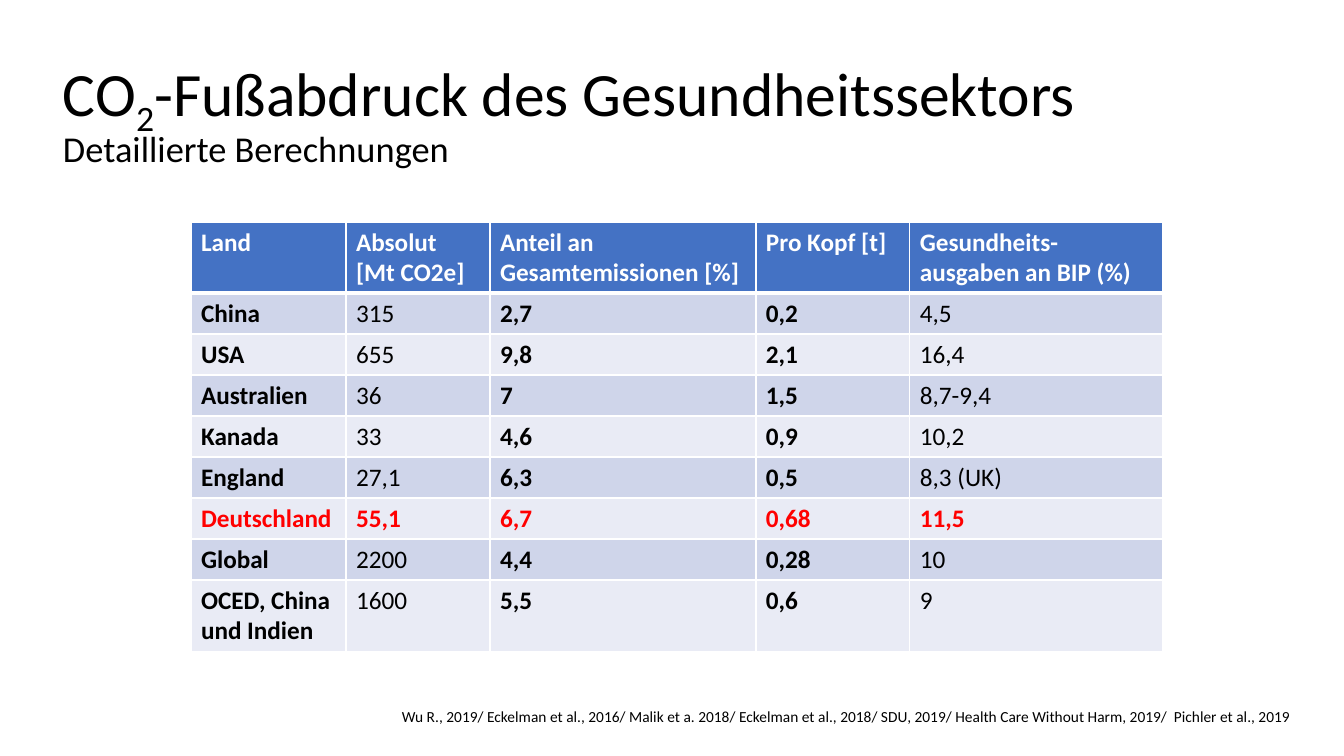
import lxml.etree
import pptx
import pptx.dml.color
import pptx.enum.text
import pptx.oxml.ns
import pptx.util

BLACK = pptx.dml.color.RGBColor(0x00, 0x00, 0x00)
WHITE = pptx.dml.color.RGBColor(0xFF, 0xFF, 0xFF)
RED = pptx.dml.color.RGBColor(0xFF, 0x00, 0x00)
BLUE = pptx.dml.color.RGBColor(0x44, 0x72, 0xC4)
BAND_DARK = pptx.dml.color.RGBColor(0xCF, 0xD5, 0xEA)
BAND_LIGHT = pptx.dml.color.RGBColor(0xE9, 0xEB, 0xF5)

HEADER = ["Land", "Absolut\n[Mt CO2e]", "Anteil an Gesamtemissionen [%]",
          "Pro Kopf [t]", "Gesundheits-ausgaben an BIP (%)"]
COUNTRIES = [
    ["China", "315", "2,7", "0,2", "4,5"],
    ["USA", "655", "9,8", "2,1", "16,4"],
    ["Australien", "36", "7", "1,5", "8,7-9,4"],
    ["Kanada", "33", "4,6", "0,9", "10,2"],
    ["England", "27,1", "6,3", "0,5", "8,3 (UK)"],
    ["Deutschland", "55,1", "6,7", "0,68", "11,5"],
    ["Global", "2200", "4,4", "0,28", "10"],
    ["OCED, China und Indien", "1600", "5,5", "0,6", "9"],
]
HIGHLIGHT = "Deutschland"
BOLD_COLUMNS = (0, 2, 3)
COLUMN_WIDTHS = [155, 144, 266, 154, 253]
ROW_HEIGHTS = [71] + [41] * 7 + [72]
SOURCES = ("Wu R., 2019/ Eckelman et al., 2016/ Malik et a. 2018/ "
           "Eckelman et al., 2018/ SDU, 2019/ Health Care Without Harm, 2019/  "
           "Pichler et al., 2019")


def px(length):
    """Turn whole pixels into EMU."""
    return pptx.util.Emu(round(length * 914400 / 100.8))


class SlideBuilder:
    """Hold the text style and the current page."""

    font_name = "Calibri"

    def __init__(self, page):
        """Keep the page that receives the elements."""
        self.page = page

    def add_span(self, para, text, size, color=BLACK, bold=False, baseline=0):
        """Add one styled run to a paragraph."""
        span = para.add_run()
        span.text = text
        span.font.name = self.font_name
        span.font.size = pptx.util.Pt(size)
        span.font.bold = bold
        span.font.color.rgb = color
        if baseline:
            span._r.get_or_add_rPr().set("baseline", str(baseline * 1000))

    def add_text(self, left, top, width, height, anchor):
        """Add a wrapping text box and return its first paragraph."""
        box = self.page.shapes.add_textbox(px(left), px(top), px(width), px(height))
        box.text_frame.word_wrap = True
        box.text_frame.vertical_anchor = anchor
        para = box.text_frame.paragraphs[0]
        para.line_spacing = 0.9
        return para

    def add_borders(self, cell, **widths):
        """Draw white cell borders with the given widths in points."""
        properties = cell._tc.get_or_add_tcPr()
        for side in "LRTB":
            line = lxml.etree.SubElement(properties, pptx.oxml.ns.qn(f"a:ln{side}"))
            line.set("w", str(pptx.util.Pt(widths.get(side, 1))))
            fill = lxml.etree.SubElement(line, pptx.oxml.ns.qn("a:solidFill"))
            color = lxml.etree.SubElement(fill, pptx.oxml.ns.qn("a:srgbClr"))
            color.set("val", str(WHITE))

    def add_cell(self, cell, text, fill, color, bold, **borders):
        """Fill one table cell, one paragraph for each line of text."""
        self.add_borders(cell, **borders)
        cell.fill.solid()
        cell.fill.fore_color.rgb = fill
        for index, line in enumerate(text.split("\n")):
            frame = cell.text_frame
            para = frame.add_paragraph() if index else frame.paragraphs[0]
            self.add_span(para, line, 18, color, bold)

    def add_table(self, left, top):
        """Add the emissions table with a header and banded rows."""
        rows = [HEADER] + COUNTRIES
        table = self.page.shapes.add_table(
            len(rows), len(HEADER), px(left), px(top),
            px(sum(COLUMN_WIDTHS)), px(sum(ROW_HEIGHTS))).table
        for column, width in zip(table.columns, COLUMN_WIDTHS):
            column.width = px(width)
        for row, height in zip(table.rows, ROW_HEIGHTS):
            row.height = px(height)
        for row_index, values in enumerate(rows):
            is_header = row_index == 0
            is_highlight = values[0] == HIGHLIGHT
            band = BAND_DARK if row_index % 2 else BAND_LIGHT
            fill = BLUE if is_header else band
            color = WHITE if is_header else RED if is_highlight else BLACK
            borders = {0: {"B": 3}, 1: {"T": 3}}.get(row_index, {})
            for column_index, text in enumerate(values):
                bold = is_header or is_highlight or column_index in BOLD_COLUMNS
                self.add_cell(table.cell(row_index, column_index), text,
                              fill, color, bold, **borders)


def main():
    """Build the slide and save the deck."""
    deck = pptx.Presentation()
    deck.slide_width, deck.slide_height = px(1344), px(756)
    builder = SlideBuilder(deck.slides.add_slide(deck.slide_layouts[6]))
    anchors = pptx.enum.text.MSO_ANCHOR

    title = builder.add_text(53, 40, 1251, 146, anchors.MIDDLE)
    builder.add_span(title, "CO", 44)
    builder.add_span(title, "2", 44, baseline=-25)
    builder.add_span(title, "-Fußabdruck des Gesundheitssektors", 44)
    title.add_line_break()
    builder.add_span(title, "Detaillierte Berechnungen", 26)

    sources = builder.add_text(392, 704, 951, 27, anchors.TOP)
    sources.space_before = pptx.util.Pt(10)
    builder.add_span(sources, SOURCES, 11)

    builder.add_table(191, 222)
    deck.save("out.pptx")


if __name__ == "__main__":
    main()
